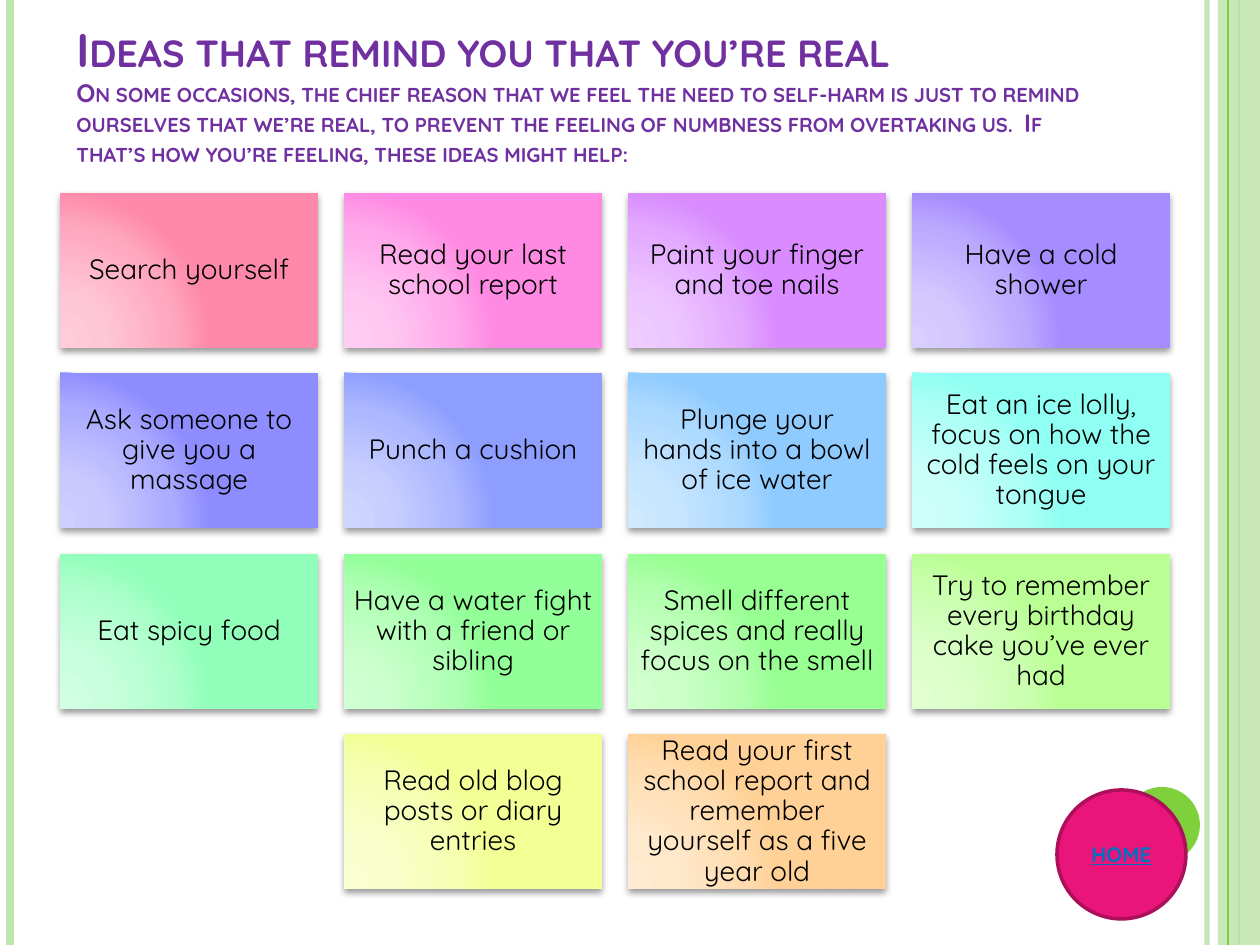
from pptx import Presentation
from pptx.dml.color import RGBColor
from pptx.enum.shapes import MSO_CONNECTOR, MSO_SHAPE
from pptx.enum.text import MSO_ANCHOR, PP_ALIGN
from pptx.oxml import parse_xml
from pptx.oxml.ns import nsdecls, qn
from pptx.oxml.xmlchemy import OxmlElement
from pptx.util import Pt

PX = 914400 / 126
C = {"pale": "C0E5AF", "green": "7FD13B", "title": "7030A0", "text": "000000",
     "pink": "EA157A", "edge": "AD105A", "link": "0070C0"}
IDEAS = [
    (0, 0, "FF89AA", "Search yourself"),
    (0, 1, "FF8AE3", "Read your last school report"),
    (0, 2, "D98BFF", "Paint your finger and toe nails"),
    (0, 3, "A58CFF", "Have a cold shower"),
    (1, 0, "8E8DFF", "Ask someone to give you a massage"),
    (1, 1, "8E9EFF", "Punch a cushion"),
    (1, 2, "8FCBFF", "Plunge your hands into a bowl of ice water"),
    (1, 3, "90FFF3", "Eat an ice lolly, focus on how the cold feels on your tongue"),
    (2, 0, "91FFBA", "Eat spicy food"),
    (2, 1, "92FF98", "Have a water fight with a friend or sibling"),
    (2, 2, "98FF93", "Smell different spices and really focus on the smell"),
    (2, 3, "B9FF94", "Try to remember every birthday cake you’ve ever had"),
    (3, 1, "F1FF95", "Read old blog posts or diary entries"),
    (3, 2, "FFD196", "Read your first school report and remember yourself as a five year old"),
]
TINTS = [(0, 0.57), (30, 0.52), (75, 0.26), (100, 0)]


def add_shape(kind, box, color):
    sp = s.shapes.add_shape(kind, *(int(v * PX) for v in box))
    sp.shadow.inherit = False
    sp.fill.solid()
    sp.fill.fore_color.rgb = RGBColor.from_string(color)
    sp.line.fill.background()
    return sp


def add_run(p, text, color, **fmt):
    r = p.add_run()
    r.text = text
    for key, value in {"name": "Quicksand", **fmt}.items():
        setattr(r.font, key, value)
    r.font.color.rgb = RGBColor.from_string(color)
    return r


prs = Presentation()
prs.slide_width, prs.slide_height = int(1260 * PX), int(945 * PX)
s = prs.slides.add_slide(prs.slide_layouts[6])

for x, color, width, alpha in [(1207, "pale", 3, 93), (10, "pale", 4.5, 100),
                               (1239, "green", 1.5, 100), (1218, "pale", 0, 87),
                               (1228, "green", 0.75, 100)]:
    if width:
        sp = s.shapes.add_connector(MSO_CONNECTOR.STRAIGHT, int(x * PX), 0, int(x * PX), int(945 * PX))
        sp.line.color.rgb = RGBColor.from_string(C[color])
        sp.line.width = Pt(width)
        sp._element.spPr.append(OxmlElement("a:effectLst"))
    else:
        sp = add_shape(MSO_SHAPE.RECTANGLE, (x, 0, 42, 945), C[color])
    if alpha < 100:
        a = OxmlElement("a:alpha")
        a.set("val", str(alpha * 1000))
        next(sp._element.spPr.iter(qn("a:srgbClr"))).append(a)

add_shape(MSO_SHAPE.OVAL, (1124, 787, 76, 76), C["green"])

tb = s.shapes.add_textbox(*(int(v * PX) for v in (64, 16, 1029, 158)))
tf = tb.text_frame
tf.word_wrap = True
tf.vertical_anchor = MSO_ANCHOR.BOTTOM
p = tf.paragraphs[0]
title = add_run(p, "Ideas that remind you that you’re real", C["title"], size=Pt(27), bold=True)
p.add_line_break()
intro = add_run(p, "On some occasions, the chief reason that we feel the need to self-harm is just "
                "to remind ourselves that we’re real, to prevent the feeling of numbness from "
                "overtaking us.  If that’s how you’re feeling, these ideas might help:",
                C["title"], size=Pt(14.4), bold=True)
for r in (title, intro):
    r._r.get_or_add_rPr().set("cap", "small")

for row, col, color, text in IDEAS:
    sp = add_shape(MSO_SHAPE.RECTANGLE, (60 + 284 * col, 193 + 361 * row // 2, 258, 155), color)
    stops = ""
    for pos, tint in TINTS:
        mix = "".join(f"{round(v + (255 - v) * tint):02X}" for v in RGBColor.from_string(color))
        stops += f'<a:gs pos="{pos * 1000}"><a:srgbClr val="{mix}"/></a:gs>'
    spPr = sp._element.spPr
    spPr.replace(spPr.find(qn("a:solidFill")), parse_xml(
        f'<a:gradFill {nsdecls("a")} rotWithShape="1"><a:gsLst>{stops}</a:gsLst><a:path path="circle">'
        '<a:fillToRect l="5000" t="100000" r="120000" b="10000"/></a:path></a:gradFill>'))
    spPr.find(qn("a:effectLst")).append(parse_xml(
        f'<a:outerShdw {nsdecls("a")} blurRad="50800" dist="25400" dir="5400000" rotWithShape="0">'
        '<a:srgbClr val="000000"><a:alpha val="40000"/></a:srgbClr></a:outerShdw>'))
    tf = sp.text_frame
    for key in ("margin_left", "margin_top", "margin_right", "margin_bottom"):
        setattr(tf, key, int(9 * PX))
    tf.word_wrap = True
    tf.vertical_anchor = MSO_ANCHOR.MIDDLE
    p = tf.paragraphs[0]
    p.alignment = PP_ALIGN.CENTER
    p.line_spacing = 0.9
    add_run(p, text, C["text"], size=Pt(16))

sp = add_shape(MSO_SHAPE.OVAL, (1057, 790, 129, 129), C["pink"])
sp.line.color.rgb = RGBColor.from_string(C["edge"])
sp.line.width = Pt(2)
sp.text_frame.vertical_anchor = MSO_ANCHOR.MIDDLE
p = sp.text_frame.paragraphs[0]
p.alignment = PP_ALIGN.CENTER
add_run(p, "HOME", C["link"], size=Pt(12), bold=True, underline=True)

prs.save("out.pptx")
